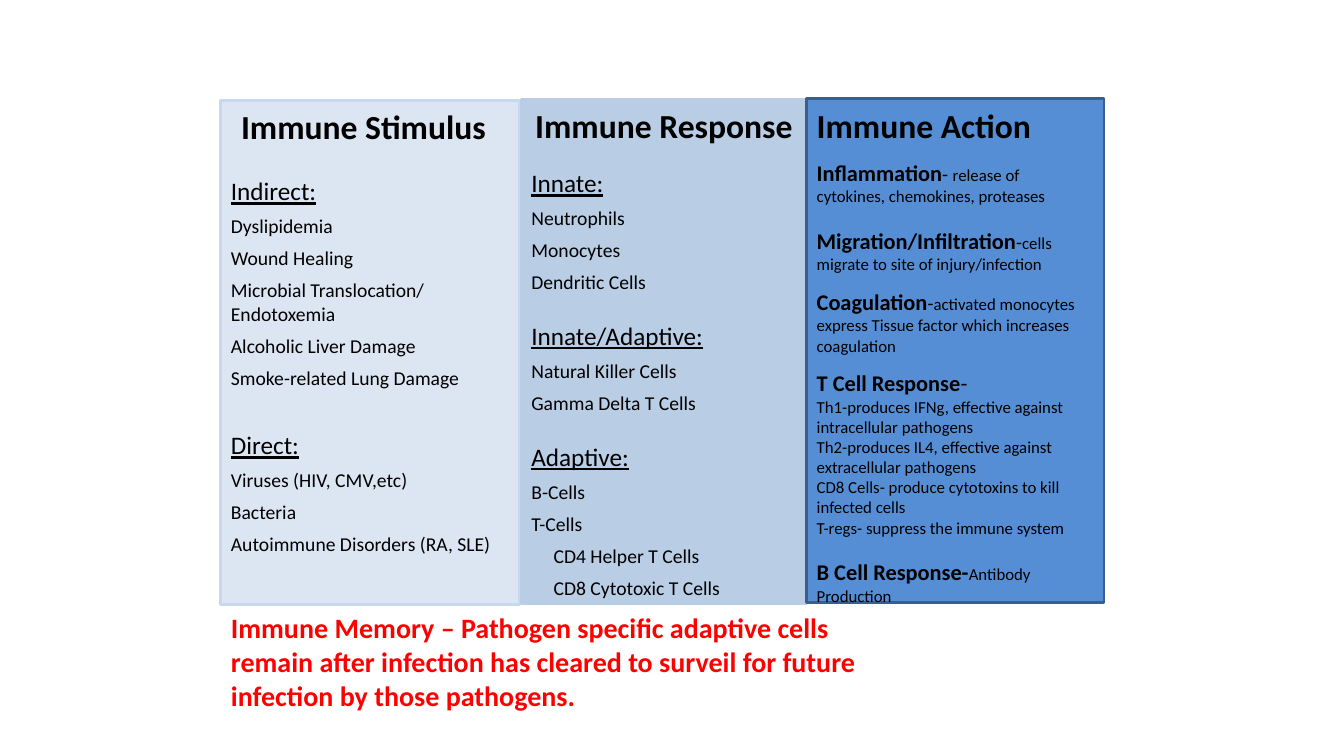
from lxml import etree
from pptx import Presentation
from pptx import util as u
from pptx.dml.color import RGBColor
from pptx.enum import shapes, text
from pptx.oxml.ns import qn

PX = 9144
COLORS = {
    "black": "000000", "red": "FF0000",
    "stimulus": "DCE6F2", "stimulus_line": "C6D9F1",
    "response": "B9CDE5", "response_line": "B9CDE5",
    "action": "558ED5", "action_line": "3A5F8C",
}
FORMATS = {
    "heading": {"size": u.Pt(24), "bold": True, "underline": False},
    "group": {"size": u.Pt(18), "bold": False, "underline": True},
    "item": {"size": u.Pt(14), "bold": False, "underline": False},
    "term": {"size": u.Pt(16), "bold": True, "underline": False},
    "dash": {"size": u.Pt(16), "bold": False, "underline": False},
    "detail": {"size": u.Pt(12), "bold": False, "underline": False},
    "memory": {"size": u.Pt(20), "bold": True, "underline": False},
}
STIMULUS = [
    (21, "Indirect:", ["Dyslipidemia", "Wound Healing", "Microbial Translocation/ Endotoxemia",
                       "Alcoholic Liver Damage", "Smoke-related Lung Damage"]),
    (29, "Direct:", ["Viruses (HIV, CMV,etc)", "Bacteria", "Autoimmune Disorders (RA, SLE)"]),
]
RESPONSE = [
    (16, "Innate:", ["Neutrophils", "Monocytes", "Dendritic Cells"]),
    (19, "Innate/Adaptive:", ["Natural Killer Cells", "Gamma Delta T Cells"]),
    (19, "Adaptive:", ["B-Cells", "T-Cells", "\tCD4 Helper T Cells", "\tCD8 Cytotoxic T Cells"]),
]
ACTION = [
    (10, [("term", "Inflammation"), ("item", "- "),
          ("detail", "release of cytokines, chemokines, proteases")]),
    (15, [("term", "Migration/Infiltration"), ("item", "-"),
          ("detail", "cells migrate to site of injury/infection")]),
    (10, [("term", "Coagulation"), ("item", "-"),
          ("detail", "activated monocytes express Tissue factor which increases coagulation")]),
    (10, [("term", "T Cell Response"), ("dash", "-")]),
    (0, [("detail", "Th1-produces IFNg, effective against intracellular pathogens")]),
    (0, [("detail", "Th2-produces IL4, effective against extracellular pathogens")]),
    (0, [("detail", "CD8 Cells- produce cytotoxins to kill infected cells")]),
    (0, [("detail", "T-regs- suppress the immune system")]),
    (15, [("term", "B Cell Response-"), ("detail", "Antibody Production")]),
]
MEMORY = ("Immune Memory – Pathogen specific adaptive cells remain after infection "
          "has cleared to surveil for future infection by those pathogens.")


def place(sp, box):
    """Move a shape to a box given in px."""
    for name, value in zip(("left", "top", "width", "height"), box):
        setattr(sp, name, value * PX)


def panel(slide, box, name):
    """Draw one coloured column background."""
    sp = slide.shapes.add_shape(shapes.MSO_SHAPE.RECTANGLE, *(v * PX for v in box))
    sp.shadow.inherit = False
    sp.fill.solid()
    sp.fill.fore_color.rgb = RGBColor.from_string(COLORS[name])
    sp.line.color.rgb = RGBColor.from_string(COLORS[name + "_line"])
    sp.line.width = u.Pt(2)


def write(slide, sp, box, paragraphs, color="black"):
    """Fill a placeholder with (space before, indent, alignment, runs) paragraphs."""
    slide.shapes._spTree.append(sp._element)
    place(sp, box)
    tf = sp.text_frame
    for name, value in {"word_wrap": True, "auto_size": text.MSO_AUTO_SIZE.NONE,
                        "vertical_anchor": text.MSO_ANCHOR.TOP}.items():
        setattr(tf, name, value)
    for i, (before, indent, align, runs) in enumerate(paragraphs):
        p = tf.add_paragraph() if i else tf.paragraphs[0]
        pPr = p._p.get_or_add_pPr()
        pPr.set("marL", str(indent * PX))
        pPr.set("indent", "0")
        etree.SubElement(pPr, qn("a:buNone"))
        for name, value in {"alignment": align, "space_before": u.Pt(before),
                            "space_after": u.Pt(0), "line_spacing": 1.0}.items():
            setattr(p, name, value)
        for style, words in runs:
            r = p.add_run()
            r.text = words
            r.font.name = "Calibri"
            r.font.color.rgb = RGBColor.from_string(COLORS[color])
            for name, value in FORMATS[style].items():
                setattr(r.font, name, value)


def group_column(slide, sp, box, heading, groups):
    """Write a centred heading over underlined groups of items."""
    left = text.PP_ALIGN.LEFT
    lines = [(0, 0, text.PP_ALIGN.CENTER, [("heading", heading)])]
    for before, title, items in groups:
        lines.append((before, 0, left, [("group", title)]))
        lines += [(6, 22 if item.startswith("\t") else 0, left, [("item", item.strip())])
                  for item in items]
    write(slide, sp, box, lines)


def action_column(slide, sp, box):
    """Write the immune action heading and its explained terms."""
    left = text.PP_ALIGN.LEFT
    lines = [(0, 0, left, [("heading", "Immune Action")])]
    lines += [(before, 0, left, runs) for before, runs in ACTION]
    write(slide, sp, box, lines)


def memory_note(slide, sp, box):
    """Write the closing statement below the columns."""
    write(slide, sp, box, [(0, 0, text.PP_ALIGN.LEFT, [("memory", MEMORY)])], "red")


def main():
    """Build and save the slide."""
    prs = Presentation()
    prs.slide_width, prs.slide_height = 1333 * PX, 750 * PX
    slide = prs.slides.add_slide(prs.slide_layouts[4])
    title, stimulus, response, action, unused = slide.placeholders
    unused._element.getparent().remove(unused._element)
    panel(slide, (219, 100, 296, 500), "stimulus")
    panel(slide, (517, 99, 283, 500), "response")
    panel(slide, (800, 98, 295, 500), "action")
    group_column(slide, stimulus, (219, 100, 283, 459), "Immune Stimulus", STIMULUS)
    group_column(slide, response, (517, 99, 283, 508), "Immune Response", RESPONSE)
    memory_note(slide, title, (219, 601, 664, 111))
    action_column(slide, action, (800, 99, 284, 528))
    prs.save("out.pptx")


if __name__ == "__main__":
    main()
